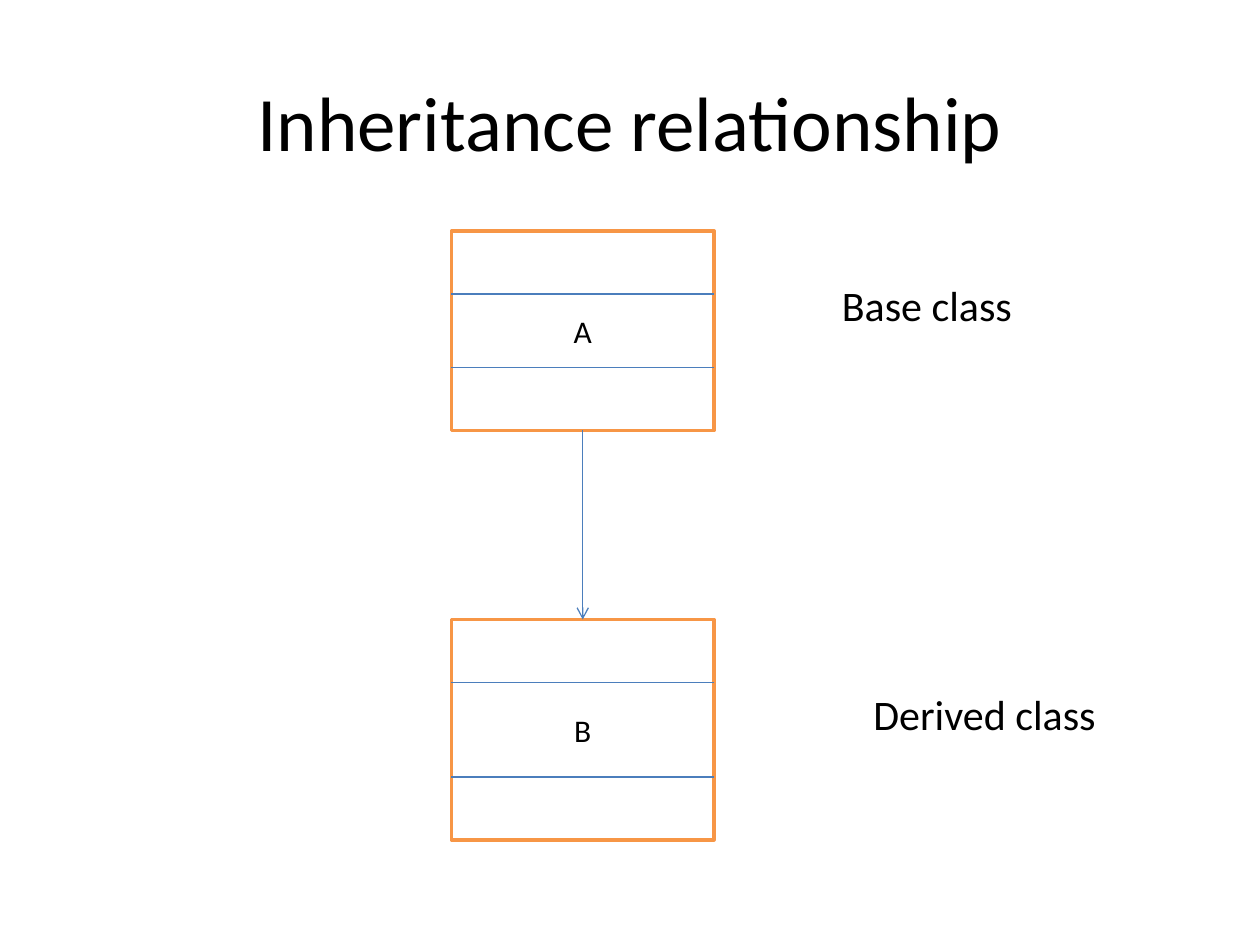
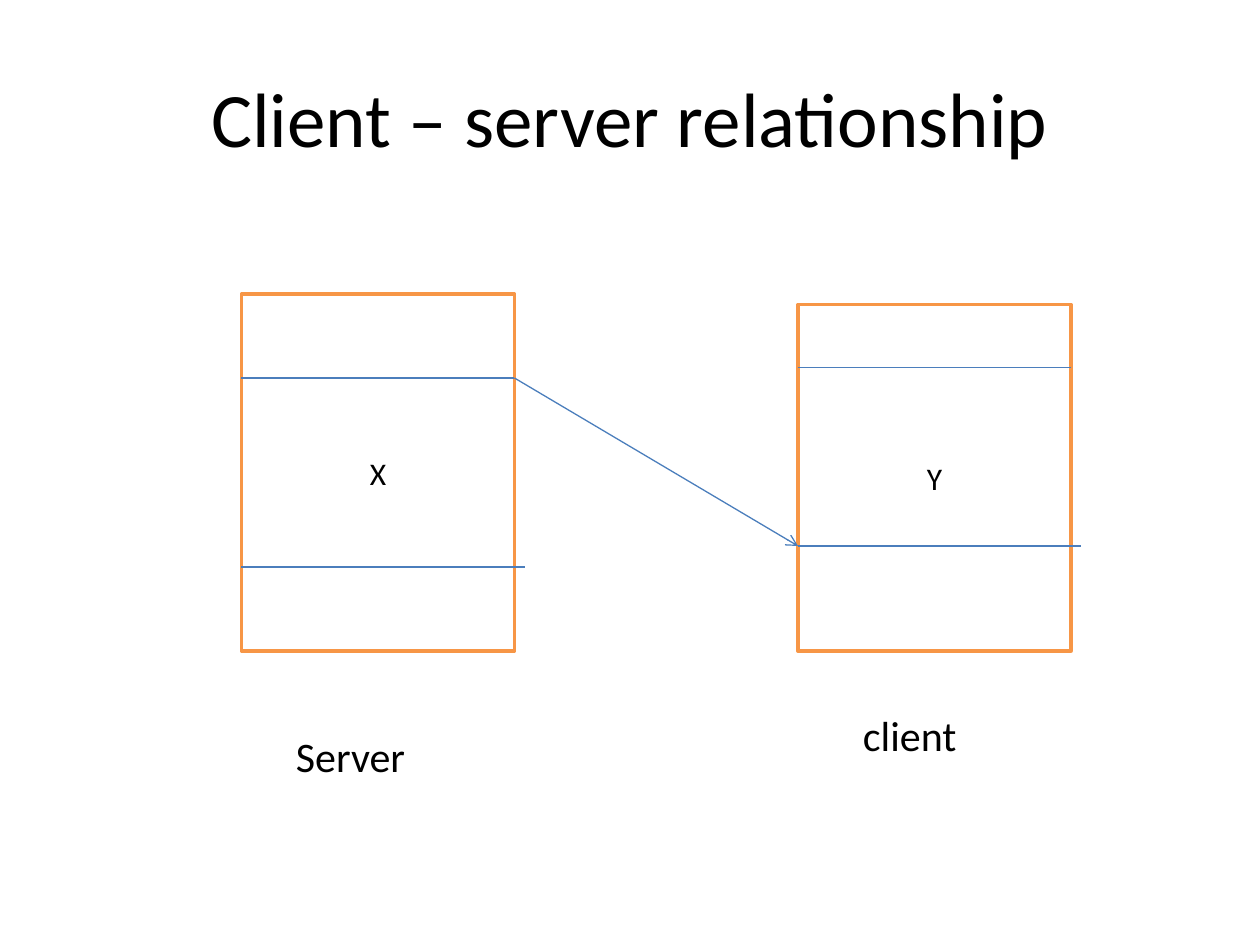
from dataclasses import dataclass

from lxml.etree import SubElement
from pptx import Presentation
from pptx.dml.color import RGBColor
from pptx.enum.shapes import MSO_CONNECTOR as Connector, MSO_SHAPE as Shape
from pptx.enum.text import MSO_ANCHOR as Anchor, PP_ALIGN as Align
from pptx.oxml.ns import qn
from pptx.util import Pt


@dataclass(frozen=True)
class Theme:
    font: str = "Calibri"
    ink: RGBColor = RGBColor(0x00, 0x00, 0x00)
    paper: RGBColor = RGBColor(0xFF, 0xFF, 0xFF)
    border: RGBColor = RGBColor(0xF7, 0x96, 0x46)
    line: RGBColor = RGBColor(0x4B, 0x7E, 0xBC)
    title_size: int = 44
    label_size: int = 24
    class_size: int = 18
    border_width: float = 2
    line_width: float = 0.75


theme = Theme()


def write(box, text, *, size, align=Align.LEFT, anchor=Anchor.TOP):
    frame = box.text_frame
    frame.word_wrap = True
    frame.vertical_anchor = anchor
    para = frame.paragraphs[0]
    para.alignment = align
    span = para.add_run()
    span.text = text
    span.font.name = theme.font
    span.font.size = Pt(size)
    span.font.color.rgb = theme.ink


def draw_line(page, start, end, arrow=False):
    points = [Pt(value) for value in (*start, *end)]
    line = page.shapes.add_connector(Connector.STRAIGHT, *points)
    line.line.color.rgb = theme.line
    line.line.width = Pt(theme.line_width)
    if arrow:
        SubElement(line.line._get_or_add_ln(), qn("a:tailEnd"), type="arrow")
    SubElement(line._element.spPr, qn("a:effectLst"))
    return line


slides = [
    {
        "title": "Inheritance relationship",
        "title_top": 24,
        "classes": [
            ("A", (258, 132, 150, 114), [(168, 0), (210, 0)]),
            ("B", (258, 354, 150, 126), [(390, 0), (444, 0)]),
        ],
        "labels": [
            ("Base class", (474, 156, 138, 36)),
            ("Derived class", (492, 390, 156, 36)),
        ],
        "arrow": ((333, 246), (333, 354)),
        "joined": True,
    },
    {
        "title": "Client – server relationship",
        "title_top": 21.6,
        "classes": [
            ("X", (138, 168, 156, 204), [(216, 0), (324, 6)]),
            ("Y", (456, 174, 156, 198), [(210, 0), (312, 6)]),
        ],
        "labels": [
            ("Server", (162, 414, 108, 36)),
            ("client", (486, 402, 96, 36)),
        ],
        "arrow": ((294, 216), (456, 312)),
        "joined": False,
    },
]

deck = Presentation()
deck.slide_width = Pt(720)
deck.slide_height = Pt(540)

for content in slides:
    page = deck.slides.add_slide(deck.slide_layouts[6])
    page.background.fill.solid()
    page.background.fill.fore_color.rgb = theme.paper

    title = page.shapes.add_textbox(Pt(36), Pt(content["title_top"]), Pt(648), Pt(90))
    write(title, content["title"], size=theme.title_size,
          align=Align.CENTER, anchor=Anchor.MIDDLE)

    class_boxes = []
    for name, (left, top, width, height), dividers in content["classes"]:
        box = page.shapes.add_shape(Shape.RECTANGLE, Pt(left), Pt(top), Pt(width), Pt(height))
        box.shadow.inherit = False
        box.fill.solid()
        box.fill.fore_color.rgb = theme.paper
        box.line.color.rgb = theme.border
        box.line.width = Pt(theme.border_width)
        write(box, name, size=theme.class_size, align=Align.CENTER, anchor=Anchor.MIDDLE)
        class_boxes.append(box)
        for divider_top, overshoot in dividers:
            draw_line(page, (left, divider_top), (left + width + overshoot, divider_top))

    arrow = draw_line(page, *content["arrow"], arrow=True)
    if content["joined"]:
        upper, lower = class_boxes
        arrow.begin_connect(upper, 2)
        arrow.end_connect(lower, 0)

    for text, bounds in content["labels"]:
        label = page.shapes.add_textbox(*[Pt(value) for value in bounds])
        write(label, text, size=theme.label_size)

deck.save("out.pptx")
